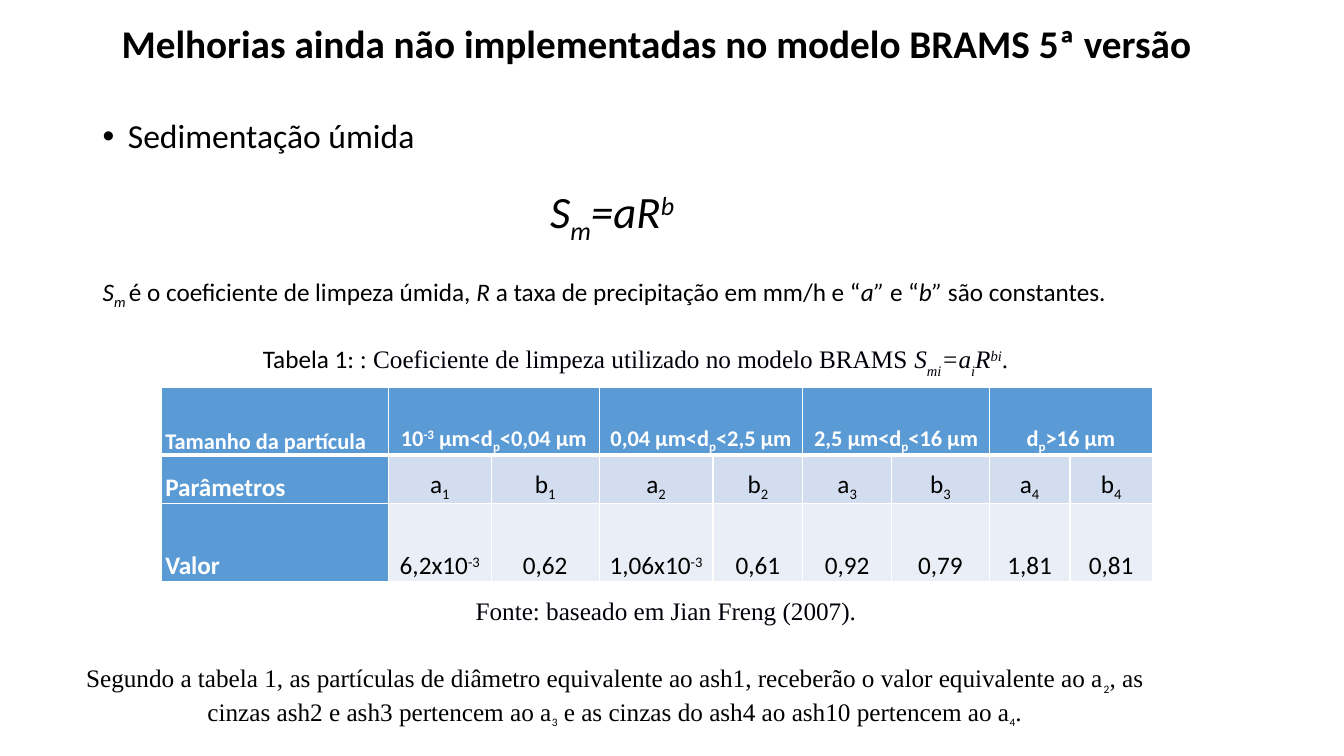
from lxml.etree import SubElement
from pptx import Presentation
from pptx.dml.color import RGBColor
from pptx.enum.text import MSO_ANCHOR as Anchor, PP_ALIGN as Align
from pptx.oxml import parse_xml
from pptx.oxml.ns import nsdecls, qn
from pptx.util import Inches, Pt

BLACK, INK, WHITE, BLUE = "000000", "00000A", "FFFFFF", "5B9BD5"
BAND_FILLS = [BLUE, "D2DEEF", "EAEFF7"]
SERIF = "Times New Roman"

presentation = Presentation()
presentation.slide_width = Inches(13.33)
presentation.slide_height = Inches(7.5)
slide = presentation.slides.add_slide(presentation.slide_layouts[6])
shapes = slide.shapes
colour = RGBColor.from_string


def share(x, y):
    """Turn percentages of the slide's width and height into lengths."""
    return int(presentation.slide_width * x / 100), int(presentation.slide_height * y / 100)


def write(paragraph, text, size=18, font="Calibri", ink=BLACK, bold=False, drop=-25):
    """Add runs parted by "|"; a leading * means italic, then _ subscript or ^ superscript."""
    for piece in text.split("|"):
        run = paragraph.add_run()
        italic = piece.startswith("*")
        piece = piece.removeprefix("*")
        baseline = {"_": drop, "^": 30}.get(piece[0])
        run.text = piece[1:] if baseline else piece
        run.font.size, run.font.name = Pt(size), font
        run.font.bold, run.font.italic = bold, italic
        run.font.color.rgb = colour(ink)
        if baseline:
            run.font._element.set("baseline", str(baseline * 1000))


# Text boxes: left, top, width, height in percent of the slide
boxes = {
    "topic": (6.9, 15.2, 34.1, 6.5, Anchor.TOP, Align.LEFT),
    "title": (5.7, 0, 86.25, 12, Anchor.MIDDLE, Align.CENTER),
    "formula": (6.9, 23.7, 77.3, 16.7, Anchor.TOP, Align.CENTER),
    "conclusion": (3.98, 87.3, 83.5, 9.5, Anchor.MIDDLE, Align.CENTER),
    "caption": (18.83, 44.8, 57.9, 9.5, Anchor.TOP, Align.LEFT),
    "credit": (34.65, 78.1, 30.15, 9.5, Anchor.TOP, Align.LEFT),
}
paragraphs = {}
frames = {}
for name, (left, top, width, height, anchor, alignment) in boxes.items():
    frame = shapes.add_textbox(*share(left, top), *share(width, height)).text_frame
    frame.word_wrap = True
    frame.vertical_anchor = anchor
    frames[name], paragraphs[name] = frame, frame.paragraphs[0]
    paragraphs[name].alignment = alignment

write(paragraphs["title"], "Melhorias ainda não implementadas no modelo BRAMS 5ª versão",
      size=28, bold=True)
write(paragraphs["topic"], "Sedimentação úmida", size=24)
for name in ("title", "topic"):
    paragraphs[name].line_spacing = 0.9
properties = paragraphs["topic"]._p.get_or_add_pPr()
properties.set("marL", str(Inches(0.25)))
properties.set("indent", str(-Inches(0.25)))
SubElement(properties, qn("a:buFont")).set("typeface", "Arial")
SubElement(properties, qn("a:buChar")).set("char", "•")

write(paragraphs["formula"], "*S|*_m|*=aR|*^b", size=32)
explanation = frames["formula"].add_paragraph()
explanation.alignment = Align.LEFT
explanation.space_before = Pt(22)
write(explanation, "*S|*_m |é o coeficiente de limpeza úmida, |*R| a taxa de precipitação "
      "em mm/h e “|*a”| e “|*b”| são constantes.")

write(paragraphs["caption"], "Tabela 1: ")
write(paragraphs["caption"], ": Coeficiente de limpeza utilizado no modelo BRAMS "
      "|*S|*_mi|*=a|*_i|*R|*^bi|.", font=SERIF, ink=INK, drop=-30)
write(paragraphs["credit"], "Fonte: baseado em Jian Freng (2007).", font=SERIF, ink=INK)

conclusion = [
    ("Segundo a tabela 1, as partículas de diâmetro equivalente ao ash1, "
     "receberão o valor equivalente ao a", "_2"),
    (", as cinzas ash2 e ash3 pertencem ao a", "_3"),
    (" e as cinzas do ash4 ao ash10 pertencem ao a", "_4"),
]
for sentence, index in conclusion:
    write(paragraphs["conclusion"], sentence, font=SERIF)
    write(paragraphs["conclusion"], index, size=14, drop=-30)
write(paragraphs["conclusion"], ".", font=SERIF)

# Table of scavenging coefficients
column_shares = [16.9, 7.65, 8.03, 8.48, 6.68, 6.6, 7.28, 6, 6.15]
row_shares = [8.93, 6.4, 10.27]
ranges = ["10|^-3| µm<d|_p|<0,04 µm", "0,04 µm<d|_p|<2,5 µm",
          "2,5 µm<d|_p|<16 µm", "d|_p|>16 µm"]
header = ["Tamanho da partícula"]
parameters = ["Parâmetros"]
for number, size_range in enumerate(ranges, 1):
    header += [size_range, ""]
    parameters += [f"a|_{number}", f"b|_{number}"]
values = ["Valor", "6,2x10|^-3", "0,62", "1,06x10|^-3", "0,61", "0,92", "0,79", "1,81", "0,81"]

table = shapes.add_table(len(row_shares), len(column_shares), *share(12, 51.3),
                         *share(sum(column_shares), sum(row_shares))).table
for column, width in zip(table.columns, column_shares):
    column.width = share(width, 0)[0]
for row, height in zip(table.rows, row_shares):
    row.height = share(0, height)[1]
for first in range(1, len(column_shares), 2):
    table.cell(0, first).merge(table.cell(0, first + 1))

for r, texts in enumerate([header, parameters, values]):
    for c, text in enumerate(texts):
        cell = table.cell(r, c)
        cell.fill.solid()
        cell.fill.fore_color.rgb = colour(BAND_FILLS[r] if c else BLUE)
        cell.vertical_anchor = Anchor.BOTTOM
        cell.margin_left = Inches(0.05 if c else 0.04)
        cell.margin_right = Inches(0.05)
        cell.margin_top = cell.margin_bottom = 0
        thick_side = {0: "B", 1: "T"}.get(r)
        for position, side in enumerate("LRTB"):
            line_width = Pt(3 if side == thick_side else 1)
            cell._tc.get_or_add_tcPr().insert(position, parse_xml(
                f'<a:ln{side} {nsdecls("a")} w="{line_width}"><a:solidFill>'
                f'<a:srgbClr val="{WHITE}"/></a:solidFill></a:ln{side}>'))
        if text:
            paragraph = cell.text_frame.paragraphs[0]
            paragraph.line_spacing = 1.15
            paragraph.alignment = Align.CENTER if c else Align.LEFT
            heading = r == 0 or c == 0
            write(paragraph, text, size=18 if r else 16, bold=heading,
                  ink=WHITE if heading else BLACK)

presentation.save("out.pptx")
